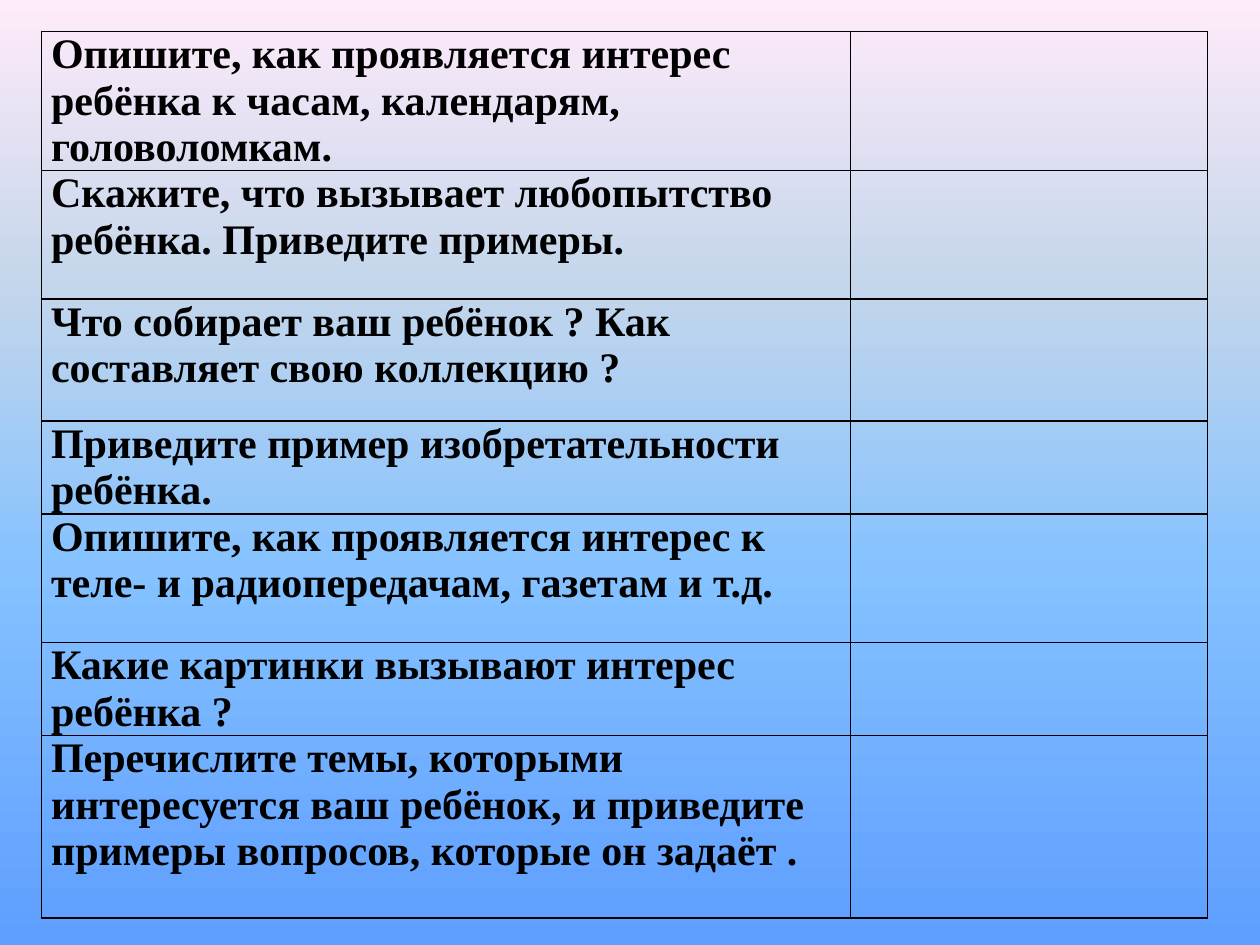
from lxml.etree import SubElement
from pptx import Presentation
from pptx.dml.color import RGBColor
from pptx.oxml.ns import qn
from pptx.util import Cm, Pt

theme = {
    "font": "Times New Roman",
    "size": Pt(24),
    "ink": "000000",
    "line": Pt(1),
    "sky": [(0, "5E9EFF"), (40, "85C2FF"), (70, "C4D6EB"), (100, "FFEBFA")],
}

# Question and row height in cm
rows = [
    ("Опишите, как проявляется интерес ребёнка к часам, календарям, головоломкам.", 2.59),
    ("Скажите, что вызывает любопытство ребёнка. Приведите примеры.", 2.59),
    ("Что собирает ваш ребёнок ? Как составляет свою коллекцию ?", 2.46),
    ("Приведите пример изобретательности ребёнка.", 1.3),
    ("Опишите, как проявляется интерес к теле- и радиопередачам, газетам и т.д.", 2.59),
    ("Какие картинки вызывают интерес ребёнка ?", 1.3),
    ("Перечислите темы, которыми интересуется ваш ребёнок, "
     "и приведите примеры вопросов, которые он задаёт .", 3.68),
]
widths = [16.31, 7.19]


def add_fill(parent, color):
    fill = SubElement(parent, qn("a:solidFill"))
    SubElement(fill, qn("a:srgbClr"), val=color)


def add_lines(cell):
    props = cell._tc.get_or_add_tcPr()
    for side in ("lnL", "lnR", "lnT", "lnB"):
        line = SubElement(props, qn("a:" + side), w=str(theme["line"]))
        add_fill(line, theme["ink"])


deck = Presentation()
deck.slide_width, deck.slide_height = Cm(25.4), Cm(19.05)
slide = deck.slides.add_slide(deck.slide_layouts[6])

# Background gradient, rising from the bottom edge
back = slide.background.fill
back.gradient()
back.gradient_angle = 90
stops = next(slide.element.iter(qn("a:gsLst")))
for stop in list(stops):
    stops.remove(stop)
for place, color in theme["sky"]:
    stop = SubElement(stops, qn("a:gs"), pos=str(place * 1000))
    SubElement(stop, qn("a:srgbClr"), val=color)

# Table of questions with room for answers
total = sum(height for _, height in rows)
frame = slide.shapes.add_table(
    len(rows), len(widths), Cm(0.84), Cm(0.63), Cm(sum(widths)), Cm(total))
table = frame.table
table.first_row = table.horz_banding = False
for col, width in zip(table.columns, widths):
    col.width = Cm(width)

for row, (text, height) in zip(table.rows, rows):
    row.height = Cm(height)
    for cell in row.cells:
        cell.margin_left = cell.margin_right = Cm(0.19)
        cell.margin_top = cell.margin_bottom = Cm(0)
        add_lines(cell)
        cell.fill.background()
    ask = row.cells[0].text_frame
    ask.text = text
    font = ask.paragraphs[0].runs[0].font
    font.name, font.size, font.bold = theme["font"], theme["size"], True
    font.color.rgb = RGBColor.from_string(theme["ink"])

deck.save("out.pptx")
